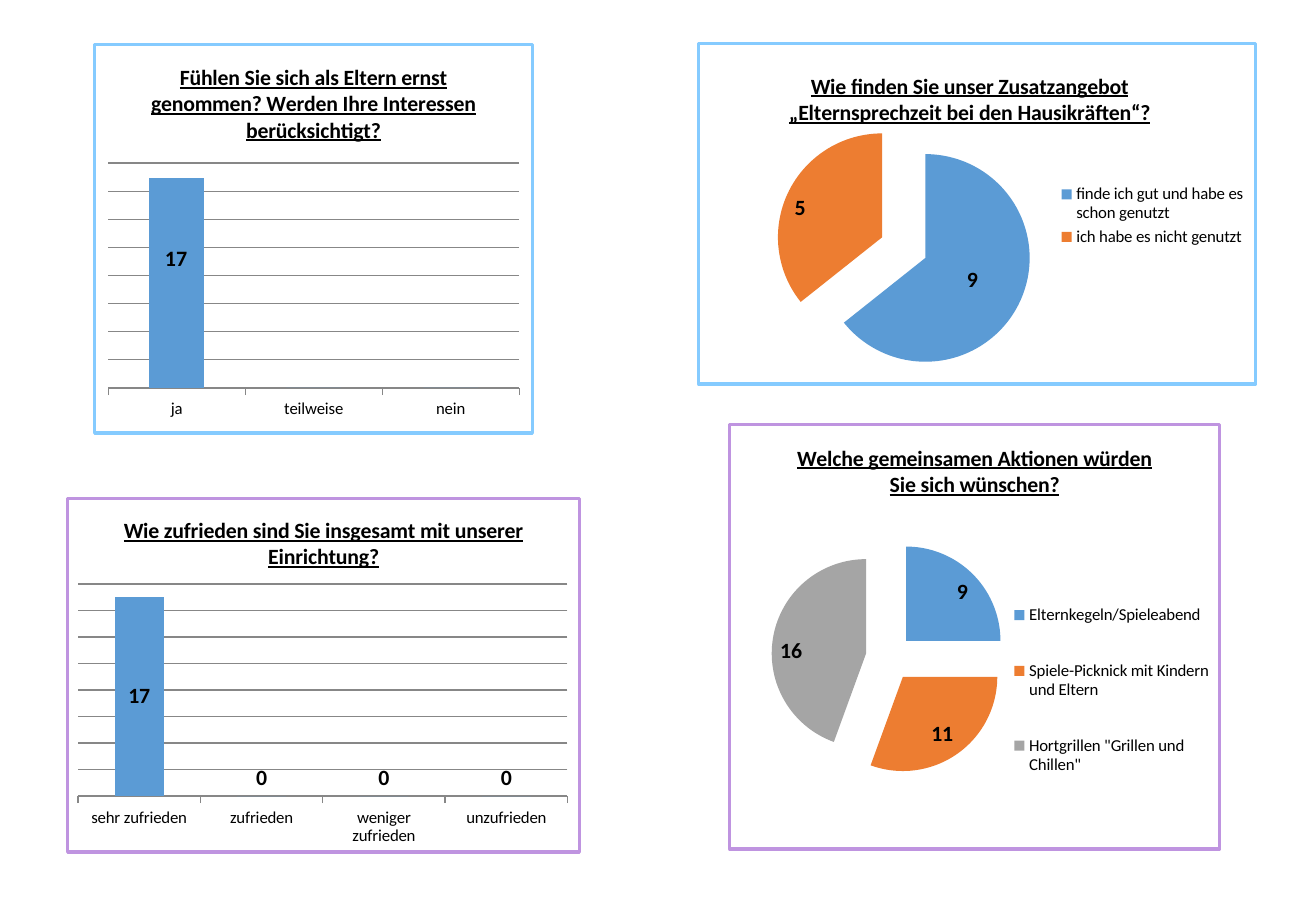
from lxml import etree
from pptx import Presentation
from pptx import util as u
from pptx.chart.data import CategoryChartData
from pptx.dml.color import RGBColor
from pptx.enum import chart as kinds
from pptx.oxml import parse_xml
from pptx.oxml.ns import nsdecls, qn

PX = 914400 / 121.5
FONT = "Calibri"
BLACK, GRAY = "000000", "878787"
SKY, LILAC = "85CBFF", "BF94E0"
SLICES = ["5B9BD5", "ED7D31", "A5A5A5"]
INSIDE = kinds.XL_LABEL_POSITION.INSIDE_END
CENTER = kinds.XL_LABEL_POSITION.CENTER
OUTSIDE = kinds.XL_LABEL_POSITION.OUTSIDE_END

# Boxes are left, top, width, height in px; layouts are fractions of the chart.
COLUMNS = [
    dict(title="Fühlen Sie sich als Eltern ernst genommen? Werden Ihre Interessen berücksichtigt?",
         box=(93, 43, 441, 392), border=SKY, plot=(0.031, 0.305, 0.939, 0.579),
         data={"ja": 100, "teilweise": 0, "nein": 0}, top=107.2, first_label=None),
    dict(title="Wie zufrieden sind Sie insgesamt mit unserer Einrichtung?",
         box=(66, 497, 515, 357), border=LILAC, plot=(0.02, 0.242, 0.957, 0.6),
         data={"sehr zufrieden": 15, "zufrieden": 0, "weniger zufrieden": 0, "unzufrieden": 0},
         top=16, first_label="17"),
]
PIES = [
    dict(title="Wie finden Sie unser Zusatzangebot „Elternsprechzeit bei den Hausikräften“?",
         box=(697, 42, 560, 344), border=SKY, plot=(0.137, 0.224, 0.463, 0.75),
         data={"finde ich gut und habe es schon genutzt": 9, "ich habe es nicht genutzt": 5},
         explosion=23, legend=(0.64, 0.4, 0.35, 0.21), labels=[CENTER, INSIDE],
         title_at=(0.155, 0.07)),
    dict(title="Welche gemeinsamen Aktionen würden Sie sich wünschen?",
         box=(728, 423, 493, 428), border=LILAC, plot=(0.085, 0.271, 0.482, 0.556),
         data={"Elternkegeln/Spieleabend": 9, "Spiele-Picknick mit Kindern und Eltern": 11,
               'Hortgrillen "Grillen und Chillen"': 16},
         explosion=25, legend=(0.57, 0.34, 0.42, 0.57), labels=[INSIDE] * 3, title_at=None),
]
BAR_NOTE = ("17", (153, 239, 53, 39))
GRID_STEPS = 8


def color(value):
    return RGBColor.from_string(value)


def emu(box):
    return [round(length * PX) for length in box]


def style(font, size=13, bold=True, underline=None):
    font.name, font.size, font.bold = FONT, u.Pt(size), bold
    font.underline = underline
    font.color.rgb = color(BLACK)


def write(frame, text, **look):
    span = frame.paragraphs[0].add_run()
    span.text = text
    style(span.font, **look)


def place(part, index, fractions, inner=False):
    """Give a chart part a fixed layout, as fractions of the chart's size."""
    for old in part.findall(qn("c:layout")):
        part.remove(old)
    layout = parse_xml(f"<c:layout {nsdecls('c')}><c:manualLayout/></c:layout>")
    settings = [("layoutTarget", "inner")] if inner else []
    settings += [("xMode", "edge"), ("yMode", "edge")]
    settings += zip("xywh", fractions)
    for name, value in settings:
        etree.SubElement(layout[0], qn(f"c:{name}")).set("val", str(value))
    part.insert(index, layout)


def add_framed_chart(page, kind, item):
    data = CategoryChartData()
    data.categories = list(item["data"])
    data.add_series("Series 1", list(item["data"].values()))
    chart = page.shapes.add_chart(kind, *emu(item["box"]), data).chart
    style(chart.font, size=10, bold=False)
    chart.has_title = True
    write(chart.chart_title.text_frame, item["title"], underline=True)
    root = chart.element
    root.find(qn("c:chart")).addnext(parse_xml(
        f'<c:spPr {nsdecls("c", "a")}><a:noFill/><a:ln w="{u.Pt(2)}"><a:solidFill>'
        f'<a:srgbClr val="{item["border"]}"/></a:solidFill></a:ln></c:spPr>'))
    place(root.find(".//" + qn("c:plotArea")), 0, item["plot"], inner=True)
    return chart


def add_columns(page, item):
    chart = add_framed_chart(page, kinds.XL_CHART_TYPE.COLUMN_CLUSTERED, item)
    chart.has_legend = False
    plot = chart.plots[0]
    plot.gap_width, plot.vary_by_categories = 150, False
    bars = plot.series[0]
    bars.format.fill.solid()
    bars.format.fill.fore_color.rgb = color(SLICES[0])
    values, names = chart.value_axis, chart.category_axis
    values.minimum_scale, values.maximum_scale = 0, item["top"]
    values.major_unit = item["top"] / GRID_STEPS
    values.visible, values.has_major_gridlines = False, True
    names.major_tick_mark = kinds.XL_TICK_MARK.OUTSIDE
    for line in (values.major_gridlines.format.line, names.format.line):
        line.color.rgb, line.width = color(GRAY), u.Pt(0.75)
    if item["first_label"]:
        labels = bars.data_labels
        labels.show_value, labels.position = True, OUTSIDE
        style(labels.font)
        first = bars.points[0].data_label
        write(first.text_frame, item["first_label"])
        first.position = CENTER


def add_pie(page, item):
    chart = add_framed_chart(page, kinds.XL_CHART_TYPE.PIE, item)
    chart.has_legend = True
    chart.legend.position = kinds.XL_LEGEND_POSITION.RIGHT
    chart.legend.include_in_layout = False
    style(chart.legend.font, size=10, bold=False)
    root = chart.element
    place(root.find(".//" + qn("c:legend")), 1, item["legend"])
    if item["title_at"]:
        place(root.find(".//" + qn("c:title")), 1, item["title_at"])
    chart.plots[0].vary_by_categories = True
    pie = chart.plots[0].series[0]
    pie.format.fill.solid()
    pie.format.fill.fore_color.rgb = color(SLICES[0])
    root.find(".//" + qn("c:ser")).find(qn("c:spPr")).addnext(parse_xml(
        f'<c:explosion {nsdecls("c")} val="{item["explosion"]}"/>'))
    pie.data_labels.show_value = True
    style(pie.data_labels.font)
    for index, position in enumerate(item["labels"]):
        point = pie.points[index]
        point.format.fill.solid()
        point.format.fill.fore_color.rgb = color(SLICES[index])
        style(point.data_label.font)
        point.data_label.position = position


def main():
    deck = Presentation()
    deck.slide_width, deck.slide_height = u.Inches(10.83), u.Inches(7.5)
    page = deck.slides.add_slide(deck.slide_layouts[6])
    for item in COLUMNS:
        add_columns(page, item)
    for item in PIES:
        add_pie(page, item)
    note, box = BAR_NOTE
    frame = page.shapes.add_textbox(*emu(box)).text_frame
    frame.word_wrap = True
    write(frame, note)
    deck.save("out.pptx")


if __name__ == "__main__":
    main()
